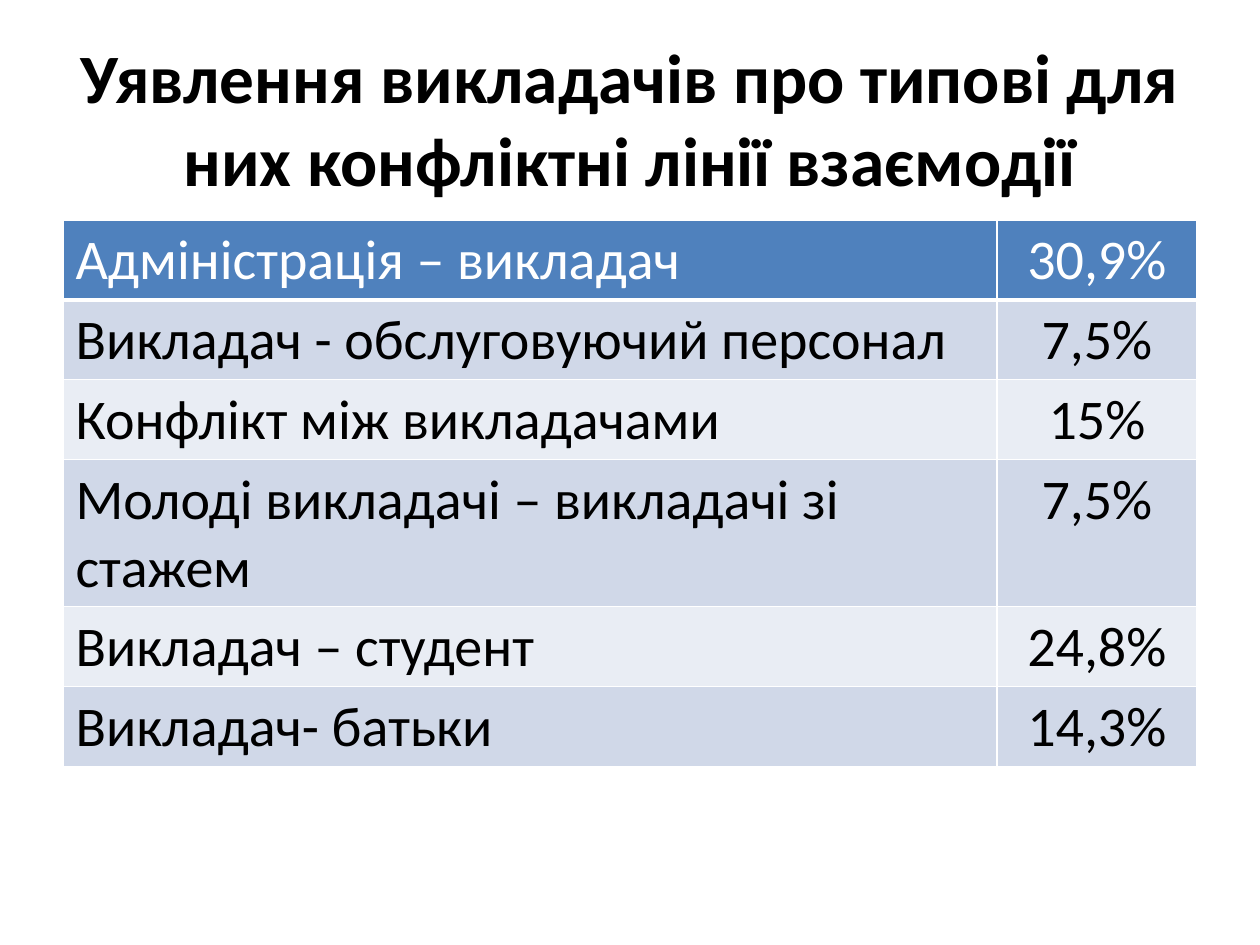
from dataclasses import dataclass

from lxml import etree
from pptx import Presentation
from pptx import util as u
from pptx.dml.color import RGBColor
from pptx.enum import text
from pptx.oxml.ns import qn

PX = u.Inches(1) / 126


@dataclass(frozen=True)
class Theme:
    """Colours, font and type sizes of the deck."""

    font: str = "Calibri"
    title_size: float = 39.6
    table_size: float = 32
    ink: str = "000000"
    paper: str = "FFFFFF"
    header: str = "4F81BD"
    bands: tuple = ("D0D8E8", "E9EDF4")


THEME = Theme()
TITLE = "Уявлення викладачів про типові для них конфліктні лінії взаємодії"
CONFLICT_LINES = [
    ("Адміністрація – викладач", "30,9%"),
    ("Викладач - обслуговуючий персонал", "7,5%"),
    ("Конфлікт між викладачами", "15%"),
    ("Молоді викладачі – викладачі зі стажем", "7,5%"),
    ("Викладач – студент", "24,8%"),
    ("Викладач- батьки", "14,3%"),
]


def px(length):
    """Turn px into EMU."""
    return u.Emu(round(length * PX))


def write(frame, words, size, color=THEME.ink, bold=False, align=text.PP_ALIGN.LEFT):
    """Write one formatted paragraph into a text frame."""
    para = frame.paragraphs[0]
    para.alignment = align
    span = para.add_run()
    span.text = words
    span.font.name = THEME.font
    span.font.size = u.Pt(size)
    span.font.bold = bold
    span.font.color.rgb = RGBColor.from_string(color)


def set_borders(cell, widths):
    """Give a cell paper-coloured borders, with widths in points by side."""
    properties = cell._tc.get_or_add_tcPr()
    for place, (side, width) in enumerate(widths.items()):
        line = etree.Element(qn(f"a:ln{side}"), w=str(u.Pt(width)))
        fill = etree.SubElement(line, qn("a:solidFill"))
        etree.SubElement(fill, qn("a:srgbClr"), val=THEME.paper)
        properties.insert(place, line)


def add_title(page, box):
    """Place the centred slide title in its box."""
    frame = page.shapes.add_textbox(*map(px, box)).text_frame
    frame.word_wrap = True
    frame.vertical_anchor = text.MSO_ANCHOR.MIDDLE
    write(frame, TITLE, THEME.title_size, bold=True, align=text.PP_ALIGN.CENTER)


def add_conflict_table(page, box, share_width):
    """Place the table of conflict lines and their shares in its box."""
    table = page.shapes.add_table(len(CONFLICT_LINES), 2, *map(px, box)).table
    table.columns[0].width = px(box[2] - share_width)
    table.columns[1].width = px(share_width)
    aligns = (text.PP_ALIGN.LEFT, text.PP_ALIGN.CENTER)
    for row, entry in enumerate(CONFLICT_LINES):
        is_header = row == 0
        fill = THEME.header if is_header else THEME.bands[(row - 1) % 2]
        color = THEME.paper if is_header else THEME.ink
        widths = {"L": 1, "R": 1, "T": 3 if row == 1 else 1, "B": 3 if is_header else 1}
        for column, words in enumerate(entry):
            cell = table.cell(row, column)
            cell.fill.solid()
            cell.fill.fore_color.rgb = RGBColor.from_string(fill)
            set_borders(cell, widths)
            write(cell.text_frame, words, THEME.table_size, color, align=aligns[column])


def main():
    """Build the deck and save it."""
    deck = Presentation()
    deck.slide_width, deck.slide_height = px(1260), px(945)
    page = deck.slides.add_slide(deck.slide_layouts[6])
    add_title(page, (63, 38, 1134, 158))
    add_conflict_table(page, (63, 220, 1134, 312), share_width=200)
    deck.save("out.pptx")


if __name__ == "__main__":
    main()
